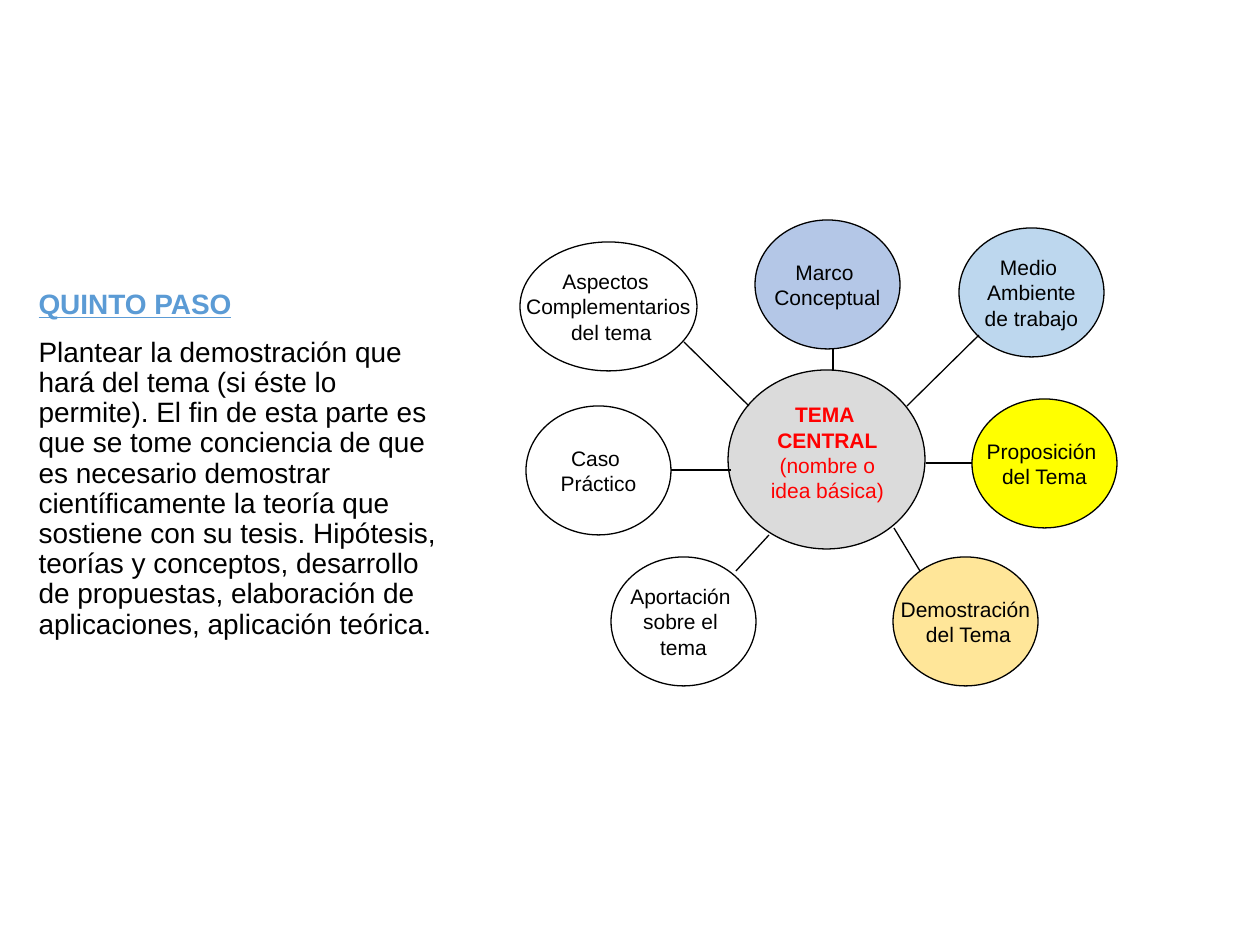
"""Build a slide with a step text and a map of ideas around a central theme."""
from lxml import etree
from pptx import Presentation
from pptx.dml.color import RGBColor
from pptx.enum.shapes import MSO_CONNECTOR, MSO_SHAPE
from pptx.enum.text import MSO_ANCHOR, MSO_AUTO_SIZE, PP_ALIGN
from pptx.oxml.ns import qn
from pptx.util import Emu, Pt

OVAL, LINE = MSO_SHAPE.OVAL, MSO_CONNECTOR.STRAIGHT
TOP, MID = MSO_ANCHOR.TOP, MSO_ANCHOR.MIDDLE
LEFT, CENTER = PP_ALIGN.LEFT, PP_ALIGN.CENTER
FIXED = MSO_AUTO_SIZE.NONE
SCALE = 914400 / 126
BLACK, RED = "000000", "FF0000"

STEP = [
    ("QUINTO PASO", "5B9BD5", True),
    ("Plantear la demostración que hará del tema (si éste lo permite). "
     "El fin de esta parte es que se tome conciencia de que es necesario "
     "demostrar científicamente la teoría que sostiene con su tesis. "
     "Hipótesis, teorías y conceptos, desarrollo de propuestas, "
     "elaboración de aplicaciones, aplicación teórica.", BLACK, False),
]
STEP_BOX = (26, 284, 433, 543)
CORE = [("TEMA ", True), ("CENTRAL", True),
        ("(nombre o", False), ("idea básica)", False)]
CORE_OVAL = (728, 370, 197, 179)
CORE_BOX = (757, 397, 141, 111)
WIDE, SIZE, HIGH = 177, 145, 129
IDEAS = [
    (520, 242, WIDE, None, ["Aspectos ", "Complementarios", " del tema"]),
    (972, 399, SIZE, "FFFF00", ["Proposición ", "del Tema"]),
    (959, 228, SIZE, "BDD7EE", ["Medio ", "Ambiente", "de trabajo"]),
    (893, 557, SIZE, "FFE699", ["Demostración", " del Tema"]),
    (755, 220, SIZE, "B4C7E7", ["Marco ", "Conceptual"]),
    (611, 557, SIZE, None, ["Aportación ", "sobre el ", "tema"]),
    (526, 406, SIZE, None, ["Caso ", "Práctico"]),
]
LINKS = [
    (684, 342, 749, 406), (979, 335, 907, 406), (671, 470, 731, 470),
    (926, 463, 972, 463), (769, 535, 736, 571), (894, 528, 920, 571),
    (833, 349, 833, 370),
]


def px(*nums):
    return [Emu(round(n * SCALE)) for n in nums]


def rgb(code):
    return RGBColor.from_string(code)


def apply(item, form):
    for key, value in form.items():
        setattr(item, key, value)


def write(frame, rows, size, para):
    for num, (text, color, bold, under) in enumerate(rows):
        part = frame.paragraphs[0] if num == 0 else frame.add_paragraph()
        apply(part, para)
        run = part.add_run()
        run.text = text
        apply(run.font, {"name": "Arial", "size": Pt(size),
                         "bold": bold, "underline": under})
        run.font.color.rgb = rgb(color)


def inset(frame, wrap, anchor):
    side, edge = px(9, 5)
    apply(frame, {"margin_left": side, "margin_right": side,
                  "margin_top": edge, "margin_bottom": edge,
                  "word_wrap": wrap, "vertical_anchor": anchor})


def stroke(line):
    line.color.rgb = rgb(BLACK)
    line.width = Pt(0.75)


def oval(group, box, fill):
    shape = group.shapes.add_shape(OVAL, *px(*box))
    shape.shadow.inherit = False
    if fill:
        shape.fill.solid()
        shape.fill.fore_color.rgb = rgb(fill)
    else:
        shape.fill.background()
    stroke(shape.line)
    return shape


def add_step(slide):
    body = slide.placeholders[1]
    apply(body, dict(zip(("left", "top", "width", "height"), px(*STEP_BOX))))
    frame = body.text_frame
    apply(frame, {"word_wrap": True, "auto_size": FIXED,
                  "vertical_anchor": TOP})
    rows = [(text, color, bold, bold) for text, color, bold in STEP]
    write(frame, rows, 16, {"alignment": LEFT, "line_spacing": 0.9,
                            "space_before": Pt(10)})
    for part in frame.paragraphs:
        props = part._p.get_or_add_pPr()
        props.set("marL", "0")
        props.set("indent", "0")
        etree.SubElement(props, qn("a:buNone"))


def add_map(slide):
    group = slide.shapes.add_group_shape()
    oval(group, CORE_OVAL, "DBDBDB")
    label = group.shapes.add_textbox(*px(*CORE_BOX)).text_frame
    inset(label, True, TOP)
    rows = [(text, RED, bold, False) for text, bold in CORE]
    write(label, rows, 12, {"alignment": CENTER})
    for left, top, width, fill, texts in IDEAS:
        frame = oval(group, (left, top, width, HIGH), fill).text_frame
        inset(frame, False, MID)
        rows = [(text, BLACK, False, False) for text in texts]
        write(frame, rows, 12, {"alignment": CENTER})
    for ends in LINKS:
        link = group.shapes.add_connector(LINE, *px(*ends))
        stroke(link.line)
        etree.SubElement(link._element.spPr, qn("a:effectLst"))


def main():
    deck = Presentation()
    deck.slide_width, deck.slide_height = px(1260, 945)
    slide = deck.slides.add_slide(deck.slide_layouts[1])
    title = slide.shapes.title._element
    title.getparent().remove(title)
    add_step(slide)
    add_map(slide)
    deck.save("out.pptx")


if __name__ == "__main__":
    main()
